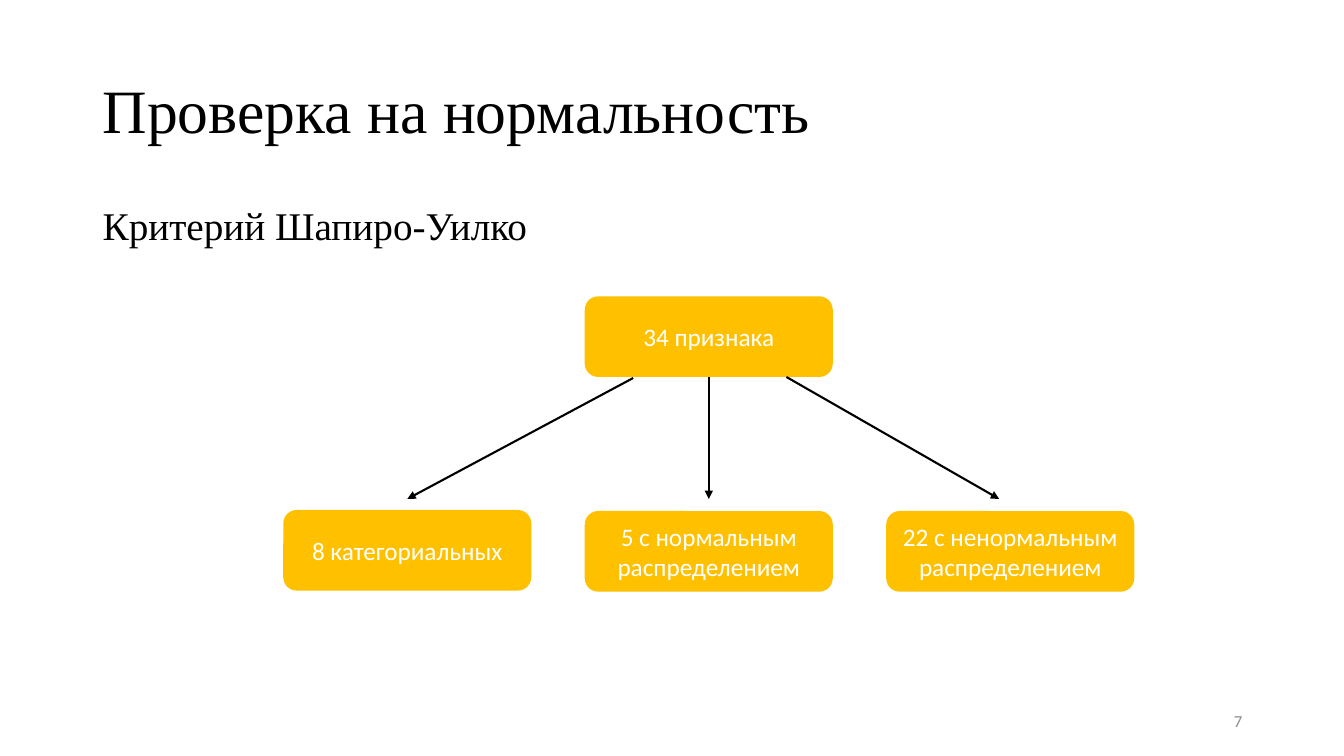
from dataclasses import dataclass

from lxml.etree import SubElement
from pptx import Presentation
from pptx.dml.color import RGBColor
from pptx.enum.shapes import MSO_CONNECTOR, MSO_SHAPE
from pptx.enum.text import MSO_ANCHOR, PP_ALIGN
from pptx.oxml.ns import qn
from pptx.util import Inches, Pt

COLORS = {"black": "000000", "white": "FFFFFF", "amber": "FFC000", "gray": "8C8C8C"}
SERIF, SANS = "Times New Roman", "Calibri"
BOX_W, BOX_H = 2.46, 0.8
BOX_LEFT, BOX_STEP = 2.81, 2.99


@dataclass
class Label:
    text: str
    left: float
    top: float
    width: float
    height: float
    size: float
    font: str
    color: str
    anchor: MSO_ANCHOR = MSO_ANCHOR.MIDDLE
    align: PP_ALIGN = PP_ALIGN.LEFT
    spacing: float = 1.0


@dataclass
class Node:
    text: str
    column: int
    top: float


@dataclass
class Arrow:
    x1: float
    y1: float
    x2: float
    y2: float


LABELS = [
    Label("Проверка на нормальность", 0.92, 0.4, 11.5, 1.45, 44, SERIF, "black", spacing=0.9),
    Label("Критерий Шапиро-Уилко", 0.92, 2, 5.75, 0.71, 28, SERIF, "black",
          anchor=MSO_ANCHOR.TOP, spacing=0.9),
    Label("7", 9.42, 6.95, 3, 0.4, 12, SANS, "gray", align=PP_ALIGN.RIGHT),
]
NODES = [
    Node("34 признака", 1, 2.94),
    Node("8 категориальных", 0, 5.06),
    Node("5 с нормальным распределением", 1, 5.07),
    Node("22 с ненормальным распределением", 2, 5.07),
]
ARROWS = [
    Arrow(6.28, 3.75, 4.04, 4.95),
    Arrow(7.8, 3.74, 9.91, 4.95),
    Arrow(7.03, 3.74, 7.03, 4.95),
]


def rgb(name: str) -> RGBColor:
    return RGBColor.from_string(COLORS[name])


def write(sp, text: str, size: float, font: str, color: str,
          anchor: MSO_ANCHOR, align: PP_ALIGN, spacing: float = 1.0) -> None:
    tf = sp.text_frame
    tf.word_wrap = True
    tf.vertical_anchor = anchor
    p = tf.paragraphs[0]
    p.alignment = align
    p.line_spacing = spacing
    r = p.add_run()
    r.text = text
    r.font.size = Pt(size)
    r.font.name = font
    r.font.color.rgb = rgb(color)


def add_label(s, label: Label) -> None:
    sp = s.shapes.add_textbox(Inches(label.left), Inches(label.top),
                              Inches(label.width), Inches(label.height))
    write(sp, label.text, label.size, label.font, label.color,
          label.anchor, label.align, label.spacing)


def add_node(s, node: Node) -> None:
    left = BOX_LEFT + node.column * BOX_STEP
    sp = s.shapes.add_shape(MSO_SHAPE.ROUNDED_RECTANGLE, Inches(left), Inches(node.top),
                            Inches(BOX_W), Inches(BOX_H))
    sp.shadow.inherit = False
    sp.fill.solid()
    sp.fill.fore_color.rgb = rgb("amber")
    sp.line.fill.background()
    write(sp, node.text, 18, SANS, "white", MSO_ANCHOR.MIDDLE, PP_ALIGN.CENTER)


def add_arrow(s, arrow: Arrow) -> None:
    cx = s.shapes.add_connector(MSO_CONNECTOR.STRAIGHT, Inches(arrow.x1), Inches(arrow.y1),
                                Inches(arrow.x2), Inches(arrow.y2))
    cx.line.color.rgb = rgb("black")
    cx.line.width = Pt(1.5)
    SubElement(cx.line._get_or_add_ln(), qn("a:tailEnd"), type="triangle")
    SubElement(cx._element.spPr, qn("a:effectLst"))


def main() -> None:
    prs = Presentation()
    prs.slide_width, prs.slide_height = Inches(13.33), Inches(7.5)
    s = prs.slides.add_slide(prs.slide_layouts[6])

    # Title, subtitle and page number
    for label in LABELS:
        add_label(s, label)

    # Tree of features
    for node in NODES:
        add_node(s, node)
    for arrow in ARROWS:
        add_arrow(s, arrow)

    prs.save("out.pptx")


if __name__ == "__main__":
    main()
